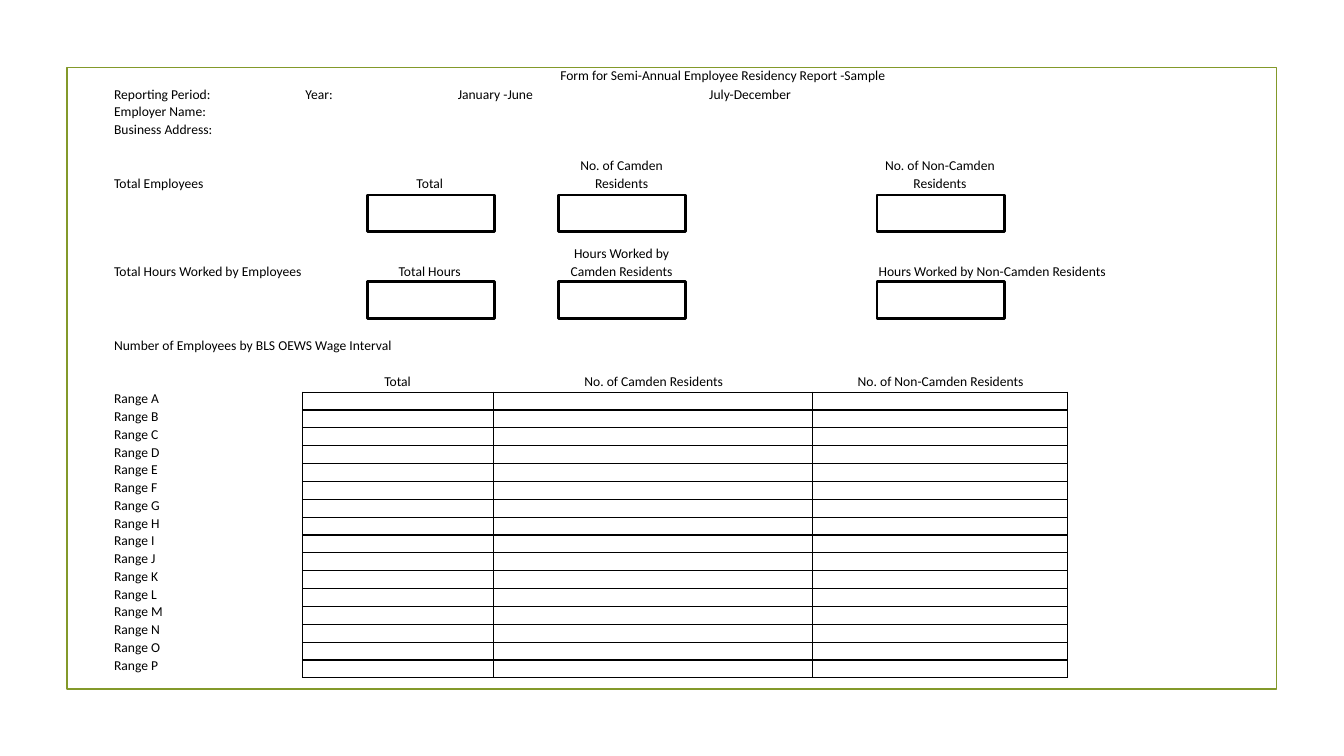
from lxml.etree import SubElement
from pptx import Presentation
from pptx.dml.color import RGBColor
from pptx.enum.shapes import MSO_SHAPE
from pptx.enum.text import MSO_ANCHOR, MSO_AUTO_SIZE, PP_ALIGN
from pptx.oxml.ns import qn
from pptx.util import Pt

BLACK = RGBColor(0x00, 0x00, 0x00)
GREEN = RGBColor(0x83, 0x99, 0x2A)
FONT = "Calibri"
TEXT_SIZE = 9.7
LINE_PITCH = 12.67

# Content: labels are (lines, left, top, width, alignment)
TITLE = "Form for Semi-Annual Employee Residency Report -Sample"
RANGES = [f"Range {letter}" for letter in "ABCDEFGHIJKLMNOP"]
LEFT, CENTER = PP_ALIGN.LEFT, PP_ALIGN.CENTER
MARGIN_LEFT = 81.5
LABELS = [
    (["Reporting Period:", "Employer Name:", "Business Address:"],
     MARGIN_LEFT, 60, 76, LEFT),
    (["Year:"], 218.2, 60, 30, LEFT),
    (["January -June"], 327, 60, 62, LEFT),
    (["July-December"], 506.6, 60, 66, LEFT),
    (["Total Employees"], MARGIN_LEFT, 124, 80, LEFT),
    (["Total"], 292, 124, 30, CENTER),
    (["No. of Camden Residents"], 413, 111.3, 62, CENTER),
    (["No. of Non-Camden Residents"], 630.4, 111.3, 82, CENTER),
    (["Total Hours Worked by Employees"], MARGIN_LEFT, 186.8, 142, LEFT),
    (["Total Hours"], 282, 186.8, 50, CENTER),
    (["Hours Worked by Camden Residents"], 406, 174.1, 76, CENTER),
    (["Hours Worked by Non-Camden Residents"], 627.6, 186.8, 170, LEFT),
    (["Number of Employees by BLS OEWS Wage Interval"],
     MARGIN_LEFT, 239.9, 210, LEFT),
    (["Total"], 269, 265.2, 30, CENTER),
    (["No. of Camden Residents"], 412, 265.2, 110, CENTER),
    (["No. of Non-Camden Residents"], 607, 265.2, 130, CENTER),
    (RANGES, MARGIN_LEFT, 277.8, 40, LEFT),
]

# Entry boxes, measured to their outer edge
ENTRY_LEFTS = [261.5, 397.9, 625.7]
ENTRY_TOPS = [138.3, 200.4]
ENTRY_WIDTH, ENTRY_HEIGHT, ENTRY_LINE = 92.7, 28, 1.8

# Wage interval table
TABLE_LEFT, TABLE_TOP = 216, 280.1
COLUMN_WIDTHS = [136.6, 227.7, 182.2]
ROW_HEIGHT = 12.78


def write(box, lines, alignment):
    frame = box.text_frame
    frame.margin_left = frame.margin_right = 0
    frame.margin_top = frame.margin_bottom = 0
    frame.auto_size = MSO_AUTO_SIZE.NONE
    frame.word_wrap = True
    frame.vertical_anchor = MSO_ANCHOR.TOP
    frame.text = "\n".join(lines)
    for para in frame.paragraphs:
        para.alignment = alignment
        para.line_spacing = Pt(LINE_PITCH)
        para.space_before = Pt(0)
        for span in para.runs:
            span.font.name = FONT
            span.font.size = Pt(TEXT_SIZE)
            span.font.color.rgb = BLACK


def add_outline(page, left, top, width, height, color, weight):
    box = page.shapes.add_shape(
        MSO_SHAPE.RECTANGLE, Pt(left), Pt(top), Pt(width), Pt(height))
    box.shadow.inherit = False
    box.fill.background()
    box.line.color.rgb = color
    box.line.width = Pt(weight)


def style_cell(cell):
    cell.margin_left = cell.margin_right = 0
    cell.margin_top = cell.margin_bottom = 0
    # An empty cell takes its height from the end-of-paragraph size
    end = cell.text_frame.paragraphs[0]._p.get_or_add_endParaRPr()
    end.set("sz", "800")
    properties = cell._tc.get_or_add_tcPr()
    for side in ("a:lnL", "a:lnR", "a:lnT", "a:lnB"):
        border = SubElement(properties, qn(side), w=str(Pt(1)))
        fill = SubElement(border, qn("a:solidFill"))
        SubElement(fill, qn("a:srgbClr"), val=str(BLACK))
    cell.fill.background()


def main():
    deck = Presentation()
    deck.slide_width, deck.slide_height = Pt(960), Pt(540)
    page = deck.slides.add_slide(deck.slide_layouts[5])

    # Frame and title
    add_outline(page, 47.8, 48.2, 864, 444, GREEN, 1.25)
    title = page.shapes.title
    title.left, title.top, title.width, title.height = (
        Pt(400.2), Pt(47), Pt(240), Pt(LINE_PITCH))
    write(title, [TITLE], LEFT)

    # Labels
    for lines, left, top, width, alignment in LABELS:
        box = page.shapes.add_textbox(
            Pt(left), Pt(top), Pt(width), Pt(LINE_PITCH * len(lines)))
        write(box, lines, alignment)

    # Entry boxes
    for top in ENTRY_TOPS:
        for left in ENTRY_LEFTS:
            add_outline(page, left + ENTRY_LINE / 2, top + ENTRY_LINE / 2,
                        ENTRY_WIDTH - ENTRY_LINE, ENTRY_HEIGHT - ENTRY_LINE,
                        BLACK, ENTRY_LINE)

    # Wage interval table
    table = page.shapes.add_table(
        len(RANGES), len(COLUMN_WIDTHS), Pt(TABLE_LEFT), Pt(TABLE_TOP),
        Pt(sum(COLUMN_WIDTHS)), Pt(ROW_HEIGHT * len(RANGES))).table
    table.first_row = table.horz_banding = False
    for column, width in zip(table.columns, COLUMN_WIDTHS):
        column.width = Pt(width)
    for row in table.rows:
        row.height = Pt(ROW_HEIGHT)
        for cell in row.cells:
            style_cell(cell)

    deck.save("out.pptx")


if __name__ == "__main__":
    main()
